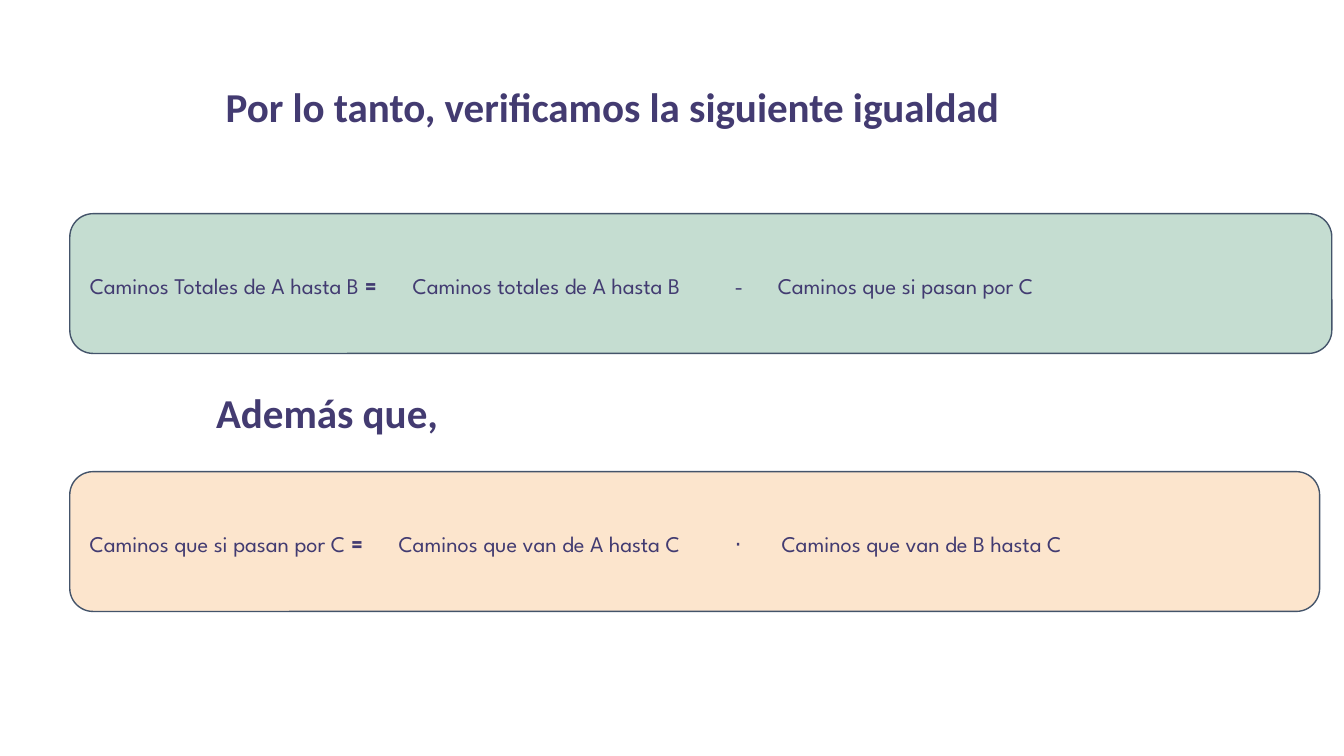
from lxml import etree
from pptx import Presentation
from pptx import util as u
from pptx.dml.color import RGBColor
from pptx.enum import shapes, text
from pptx.oxml import ns

PURPLE = RGBColor(0x43, 0x3B, 0x71)
TERM_PURPLE = RGBColor(0x42, 0x3B, 0x71)
SLATE = RGBColor(0x44, 0x54, 0x6A)
GREEN = RGBColor(0xC5, 0xDD, 0xD1)
PEACH = RGBColor(0xFC, 0xE5, 0xCD)


class EquationPage:
    heading_font, heading_size = "Calibri", 22
    term_font, term_size = "League Spartan", 12
    inset = 7.2
    band_left, band_height = 37.4, 74.9

    def __init__(self, page):
        self.page = page

    def set_insets(self, frame):
        frame.word_wrap = True
        frame.margin_left = frame.margin_right = u.Pt(self.inset)
        frame.margin_top = frame.margin_bottom = u.Pt(self.inset)

    def set_font(self, para, name, size, color):
        para.font.name = name
        para.font.size = u.Pt(size)
        para.font.color.rgb = color

    def set_tabs(self, para, stops):
        properties = para._p.get_or_add_pPr()
        tab_list = etree.SubElement(properties, ns.qn("a:tabLst"))
        for stop in stops:
            etree.SubElement(tab_list, ns.qn("a:tab"), pos=str(u.Pt(stop)), algn="l")

    def heading(self, wording, left, top):
        box = self.page.shapes.add_textbox(u.Pt(left), u.Pt(top), u.Pt(476.6), u.Pt(41))
        frame = box.text_frame
        self.set_insets(frame)
        frame.auto_size = text.MSO_AUTO_SIZE.SHAPE_TO_FIT_TEXT
        para = frame.paragraphs[0]
        para.text = wording
        self.set_font(para, self.heading_font, self.heading_size, PURPLE)
        para.font.bold = True

    def equation(self, result, first, operator, second, top, width, fill, stops):
        """Draw a rounded band; the stops place the terms right of the equals sign."""
        band = self.page.shapes.add_shape(
            shapes.MSO_SHAPE.ROUNDED_RECTANGLE,
            u.Pt(self.band_left), u.Pt(top), u.Pt(width), u.Pt(self.band_height))
        band.shadow.inherit = False
        band.fill.solid()
        band.fill.fore_color.rgb = fill
        band.line.color.rgb = SLATE
        band.line.width = u.Pt(0.75)
        frame = band.text_frame
        self.set_insets(frame)
        frame.vertical_anchor = text.MSO_ANCHOR.MIDDLE
        para = frame.paragraphs[0]
        self.set_tabs(para, stops)
        para.alignment = text.PP_ALIGN.JUSTIFY
        para.line_spacing = 1.15
        self.set_font(para, self.term_font, self.term_size, TERM_PURPLE)
        terms = f"\t{first}\t{operator}\t{second}"
        for wording, bold in ((result, False), (" =", True), (terms, False)):
            span = para.add_run()
            span.text = wording
            span.font.bold = bold


def main():
    deck = Presentation()
    deck.slide_width, deck.slide_height = u.Pt(720), u.Pt(405)
    page = EquationPage(deck.slides.add_slide(deck.slide_layouts[6]))

    page.heading("Por lo tanto, verificamos la siguiente igualdad", 113.8, 36.7)
    page.equation("Caminos Totales de A hasta B", "Caminos totales de A hasta B",
                  "-", "Caminos que si pasan por C",
                  top=114.5, width=676.1, fill=GREEN, stops=(173, 345.5, 368.6))
    page.heading("Además que,", 108.7, 200.2)
    page.equation("Caminos que si pasan por C", "Caminos que van de A hasta C",
                  "⋅", "Caminos que van de B hasta C",
                  top=252.7, width=669.6, fill=PEACH, stops=(165.5, 345.5, 370.7))

    deck.save("out.pptx")


if __name__ == "__main__":
    main()
